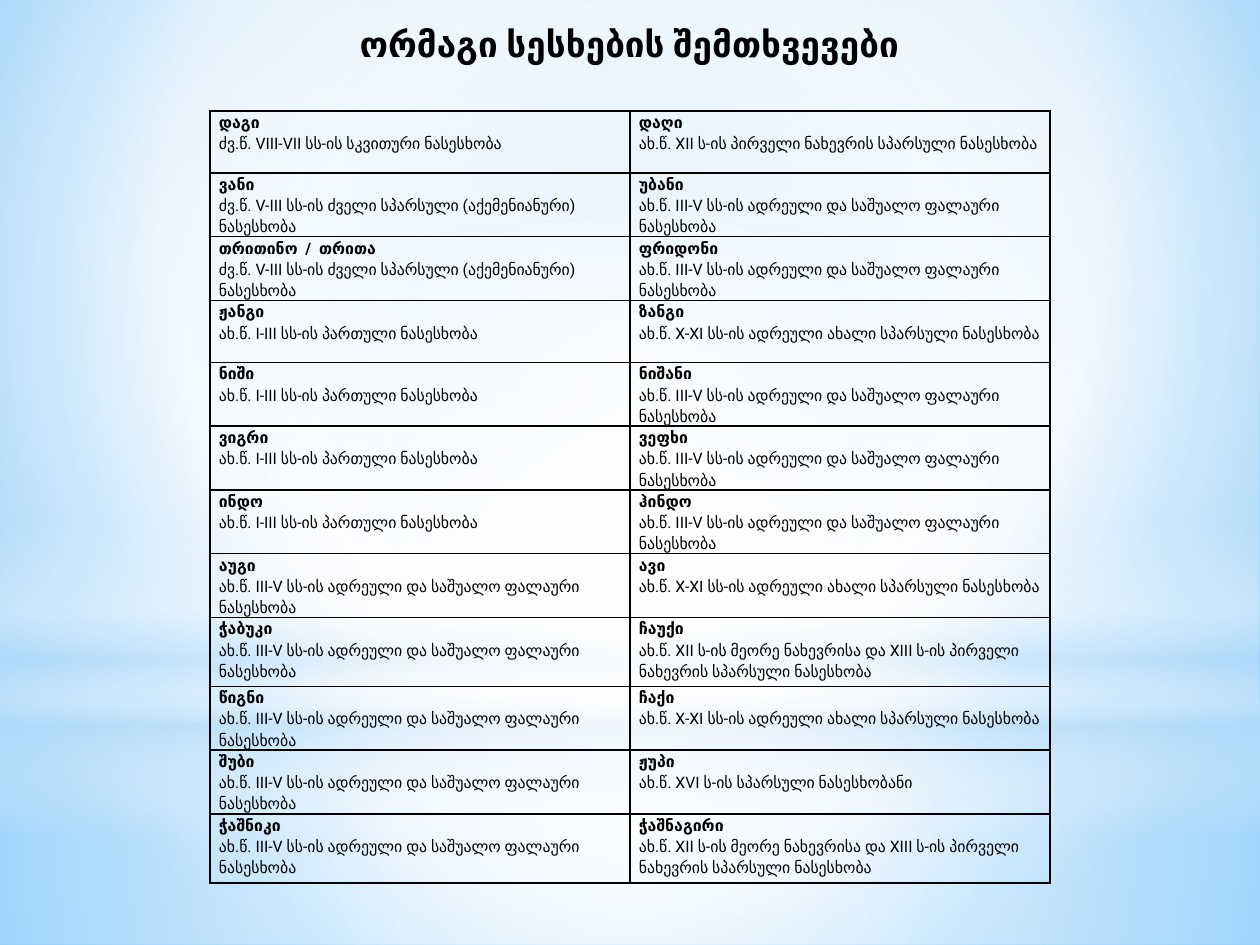
import pptx
import pptx.util
import pptx.dml.color
import pptx.enum.shapes
import pptx.enum.text
import pptx.oxml
import pptx.oxml.ns

TITLE = "ორმაგი სესხების შემთხვევები"

OLD_PERSIAN = "ძვ.წ. V-III სს-ის ძველი სპარსული (აქემენიანური) ნასესხობა"
PARTHIAN = "ახ.წ. I-III სს-ის პართული ნასესხობა"
PAHLAVI = "ახ.წ. III-V სს-ის ადრეული და საშუალო ფალაური ნასესხობა"
NEW_PERSIAN = "ახ.წ. X-XI სს-ის ადრეული ახალი სპარსული ნასესხობა"
LATER_PERSIAN = "ახ.წ. XII ს-ის მეორე ნახევრისა და XIII ს-ის პირველი ნახევრის სპარსული ნასესხობა"

SHORT_ROW, TALL_ROW = 62, 69
LOANS = [
    (SHORT_ROW, ("დაგი", "ძვ.წ. VIII-VII სს-ის სკვითური ნასესხობა"),
     ("დაღი", "ახ.წ. XII ს-ის პირველი ნახევრის სპარსული ნასესხობა")),
    (SHORT_ROW, ("ვანი", OLD_PERSIAN), ("უბანი", PAHLAVI)),
    (SHORT_ROW, ("თრითინო  /  თრითა", OLD_PERSIAN), ("ფრიდონი", PAHLAVI)),
    (SHORT_ROW, ("ჟანგი", PARTHIAN), ("ზანგი", NEW_PERSIAN)),
    (SHORT_ROW, ("ნიში", PARTHIAN), ("ნიშანი", PAHLAVI)),
    (SHORT_ROW, ("ვიგრი", PARTHIAN), ("ვეფხი", PAHLAVI)),
    (SHORT_ROW, ("ინდო", PARTHIAN), ("ჰინდო", PAHLAVI)),
    (SHORT_ROW, ("აუგი", PAHLAVI), ("ავი", NEW_PERSIAN)),
    (TALL_ROW, ("ჭაბუკი", PAHLAVI), ("ჩაუქი", LATER_PERSIAN)),
    (SHORT_ROW, ("წიგნი", PAHLAVI), ("ჩაქი", NEW_PERSIAN)),
    (SHORT_ROW, ("შუბი", PAHLAVI), ("ჟუპი", "ახ.წ. XVI ს-ის სპარსული ნასესხობანი")),
    (TALL_ROW, ("ჭაშნიკი", PAHLAVI), ("ჭაშნაგირი", LATER_PERSIAN)),
]

BLACK = pptx.dml.color.RGBColor(0x00, 0x00, 0x00)
WHITE = pptx.dml.color.RGBColor(0xFF, 0xFF, 0xFF)
PALE_BLUE = pptx.dml.color.RGBColor(0xB4, 0xDC, 0xFA)
SKY = pptx.dml.color.RGBColor(0x9E, 0xD5, 0xFF)
DEEP_SKY = pptx.dml.color.RGBColor(0x5B, 0xB9, 0xFF)
FONT = "Roboto"

WIDTH, HEIGHT, HORIZON = 1260, 945, 703
RECTANGLE = pptx.enum.shapes.MSO_SHAPE.RECTANGLE
OVAL = pptx.enum.shapes.MSO_SHAPE.OVAL
CENTRE = (50, 50, 50, 50)
SKY_STOPS = [(0, SKY, 100), (60, WHITE, 100), (100, DEEP_SKY, 100)]
SKY_FOCUS = (20, 10, 20, 60)
GLOWS = [
    (RECTANGLE, (0, HORIZON, WIDTH, HEIGHT - HORIZON), CENTRE,
     [(0, WHITE, 91), (37, WHITE, 76), (100, PALE_BLUE, 79)]),
    (RECTANGLE, (0, 0, WIDTH, HORIZON), CENTRE,
     [(0, WHITE, 89), (48, WHITE, 62), (100, PALE_BLUE, 79)]),
    (RECTANGLE, (0, 519, WIDTH, 315), None,
     [(0, WHITE, 0), (29, WHITE, 30), (45, PALE_BLUE, 40),
      (55, WHITE, 26), (65, PALE_BLUE, 60), (100, WHITE, 0)]),
    (OVAL, (0, 220, WIDTH, HORIZON), CENTRE,
     [(0, WHITE, 100), (56, WHITE, 0)]),
]

NS = pptx.oxml.ns.nsdecls("a")
SOLID_FILL = pptx.oxml.ns.qn("a:solidFill")


def px(length):
    return pptx.util.Emu(round(length * 914400 / 126))


def set_gradient(owner, stops, focus):
    owner.fill.solid()
    solid = next(owner._element.iter(SOLID_FILL)) if hasattr(owner, "_element") else None
    return replace_fill(solid, stops, focus)


def replace_fill(solid, stops, focus):
    stop_xml = "".join(
        f'<a:gs pos="{position * 1000}"><a:srgbClr val="{color}">'
        f'<a:alpha val="{opacity * 1000}"/></a:srgbClr></a:gs>'
        for position, color, opacity in stops)
    if focus:
        left, top, right, bottom = (side * 1000 for side in focus)
        direction = (f'<a:path path="circle"><a:fillToRect l="{left}" t="{top}" '
                     f'r="{right}" b="{bottom}"/></a:path>')
    else:
        direction = '<a:lin ang="5400000" scaled="0"/>'
    gradient = pptx.oxml.parse_xml(
        f'<a:gradFill {NS} rotWithShape="1"><a:gsLst>{stop_xml}</a:gsLst>{direction}</a:gradFill>')
    solid.getparent().replace(solid, gradient)


def write(paragraph, text, size=9, bold=False, align=None, spacing=None):
    paragraph.alignment = align
    paragraph.line_spacing = spacing
    run = paragraph.add_run()
    run.text = text
    run.font.name = FONT
    run.font.size = pptx.util.Pt(size)
    run.font.bold = bold
    run.font.color.rgb = BLACK


def fill_cell(cell, word, origin):
    cell.margin_left = cell.margin_right = px(9)
    cell.margin_top = cell.margin_bottom = 0
    write(cell.text_frame.paragraphs[0], word, bold=True, spacing=1.15)
    write(cell.text_frame.add_paragraph(), origin, spacing=1.15)
    properties = cell._tc.get_or_add_tcPr()
    for side in "LRTB":
        properties.append(pptx.oxml.parse_xml(
            f'<a:ln{side} {NS} w="12700"><a:solidFill><a:srgbClr val="{BLACK}"/>'
            f'</a:solidFill></a:ln{side}>'))
    cell.fill.background()


def main():
    deck = pptx.Presentation()
    deck.slide_width, deck.slide_height = px(WIDTH), px(HEIGHT)
    slide = deck.slides.add_slide(deck.slide_layouts[5])

    slide.background.fill.solid()
    replace_fill(next(slide._element.iter(SOLID_FILL)), SKY_STOPS, SKY_FOCUS)
    for outline, place, focus, stops in GLOWS:
        glow = slide.shapes.add_shape(outline, *map(px, place))
        glow.shadow.inherit = False
        glow.line.fill.background()
        set_gradient(glow, stops, focus)

    title = slide.shapes.title
    slide.shapes._spTree.append(title._element)
    title.left, title.top, title.width, title.height = map(px, (241, 18, 777, 93))
    title.text_frame.vertical_anchor = pptx.enum.text.MSO_ANCHOR.TOP
    title.text_frame.margin_top = px(4)
    write(title.text_frame.paragraphs[0], TITLE, size=20, bold=True,
          align=pptx.enum.text.PP_ALIGN.CENTER)

    table_height = sum(height for height, *_ in LOANS)
    loans = slide.shapes.add_table(
        len(LOANS), 2, *map(px, (210, 111, 840, table_height))).table
    loans.first_row = loans.horz_banding = False
    for row, (height, *pair) in zip(loans.rows, LOANS):
        row.height = px(height)
        for cell, (word, origin) in zip(row.cells, pair):
            fill_cell(cell, word, origin)

    deck.save("out.pptx")


if __name__ == "__main__":
    main()
